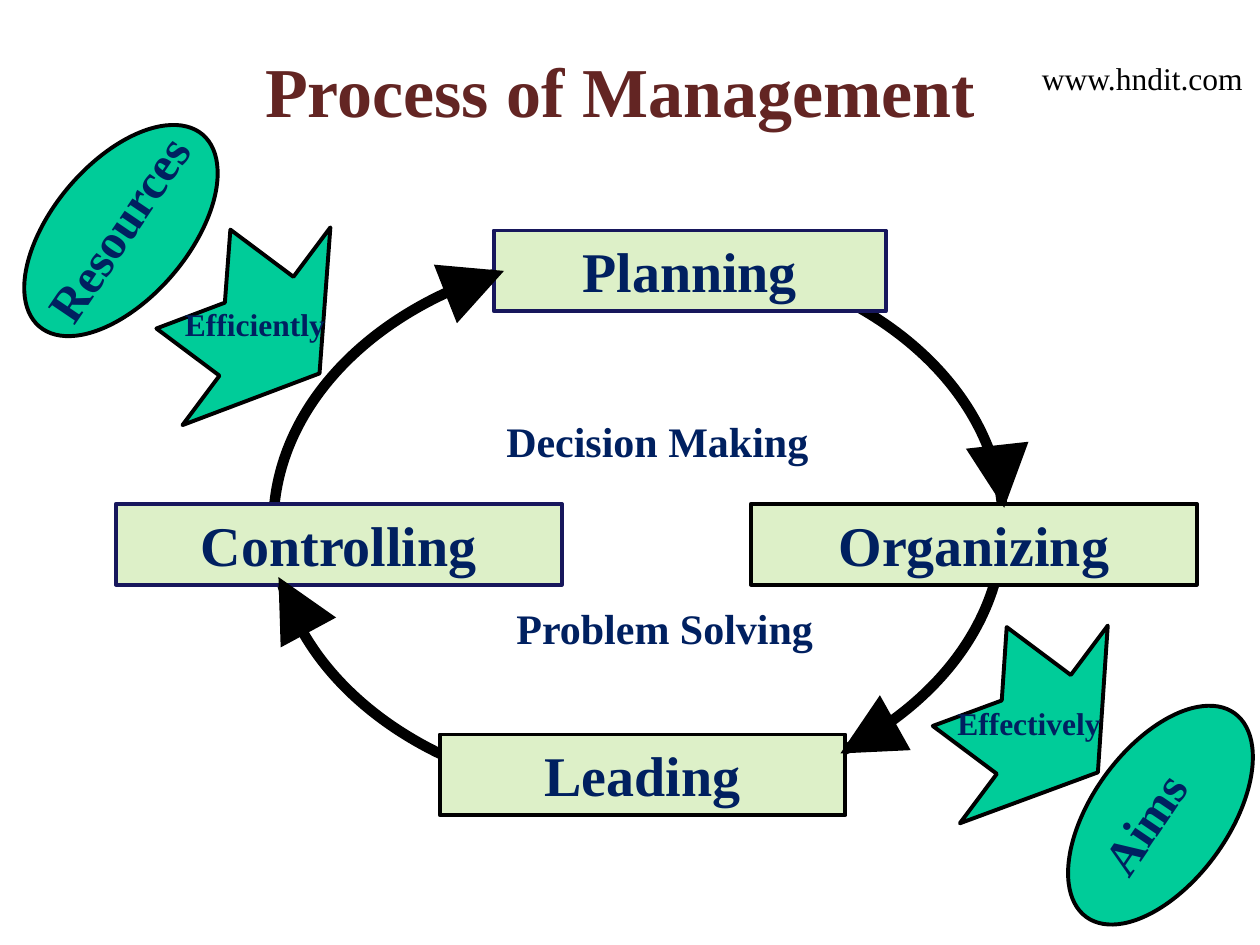
"""Build the management cycle slide."""
from lxml.etree import SubElement
from pptx import Presentation
from pptx.dml.color import RGBColor
from pptx.enum.shapes import MSO_CONNECTOR as Link, MSO_SHAPE as Kind
from pptx.enum.text import MSO_ANCHOR as Anchor, MSO_AUTO_SIZE as Fit, PP_ALIGN as Align
from pptx.oxml.ns import qn
from pptx.util import Pt

PX = 9144
NAVY, GREEN, PALE, BLACK = "002060", "00CC99", "DDF0C8", "000000"
rgb = RGBColor.from_string


def write(shape, text, size, color=NAVY, bold=True, align=Align.LEFT):
    frame = shape.text_frame
    frame.word_wrap = True
    frame.auto_size = Fit.NONE
    frame.vertical_anchor = Anchor.TOP
    frame.text = text
    para = frame.paragraphs[0]
    para.alignment = align
    font = para.font
    font.name, font.size, font.bold = "Times New Roman", Pt(size), bold
    font.color.rgb = rgb(color)


def draw(kind, box, fill, edge=BLACK, width=2.25, turn=0):
    shape = shapes.add_shape(kind, *[n * PX for n in box])
    shape.shadow.inherit = False
    shape.rotation = turn
    shape.fill.solid()
    shape.fill.fore_color.rgb = rgb(fill)
    shape.line.color.rgb = rgb(edge)
    shape.line.width = Pt(width)
    return shape


deck = Presentation()
deck.slide_width, deck.slide_height = 1000 * PX, 750 * PX
slide = deck.slides.add_slide(deck.slide_layouts[5])
shapes = slide.shapes

title = shapes.title
title.left, title.top, title.width, title.height = [n * PX for n in (67, 33, 850, 125)]
write(title, "Process of Management", 40, "632523", align=Align.CENTER)

draw(Kind.OVAL, (217, 200, 579, 433), "FFFFFF", width=6)

steps = [
    ("Planning", 392, 183, 311, "17175C"),
    ("Organizing", 596, 400, 354, BLACK),
    ("Leading", 349, 583, 322, BLACK),
    ("Controlling", 92, 400, 354, "17175C"),
]
for text, x, y, w, edge in steps:
    step = draw(Kind.RECTANGLE, (x, y, w, 64), PALE, edge)
    write(step, text, 32, align=Align.CENTER)

heads = [
    (367, 228, 400, 215),
    (241, 495, 221, 458),
    (708, 575, 667, 598),
    (792, 358, 797, 403),
]
for ends in heads:
    head = shapes.add_connector(Link.STRAIGHT, *[n * PX for n in ends])
    head.line.color.rgb = rgb(BLACK)
    head.line.width = Pt(12)
    SubElement(head.line._get_or_add_ln(), qn("a:tailEnd"), type="triangle")
    SubElement(head._element.spPr, qn("a:effectLst"))

signs = [
    (Kind.NOTCHED_RIGHT_ARROW, (757, 477, 127, 196), 36.8),
    (Kind.OVAL, (867, 547, 108, 200), 36.1),
    (Kind.OVAL, (42, 83, 108, 200), 40.4),
    (Kind.NOTCHED_RIGHT_ARROW, (141, 161, 125, 196), 36.8),
]
for kind, box, turn in signs:
    draw(kind, box, GREEN, turn=turn)

labels = [
    ("Decision Making", (392, 325, 283, 50), 24, 0, 10),
    ("Problem Solving", (400, 473, 275, 50), 24, 0, 10),
    ("Aims", (808, 611, 218, 57), 28, 304, 49),
    ("Effectively", (750, 554, 150, 40), 18, 0, 10),
    ("Resources", (-5, 144, 208, 57), 28, 304, 10),
    ("Efficiently", (137, 237, 150, 40), 18, 0, 10),
]
for text, box, size, turn, inset in labels:
    label = shapes.add_textbox(*[n * PX for n in box])
    label.rotation = turn
    label.text_frame.margin_left = inset * PX
    write(label, text, size)

site = shapes.add_textbox(*[n * PX for n in (817, 42, 192, 40)])
write(site, "www.hndit.com", 18, BLACK, bold=False)

deck.save("out.pptx")
